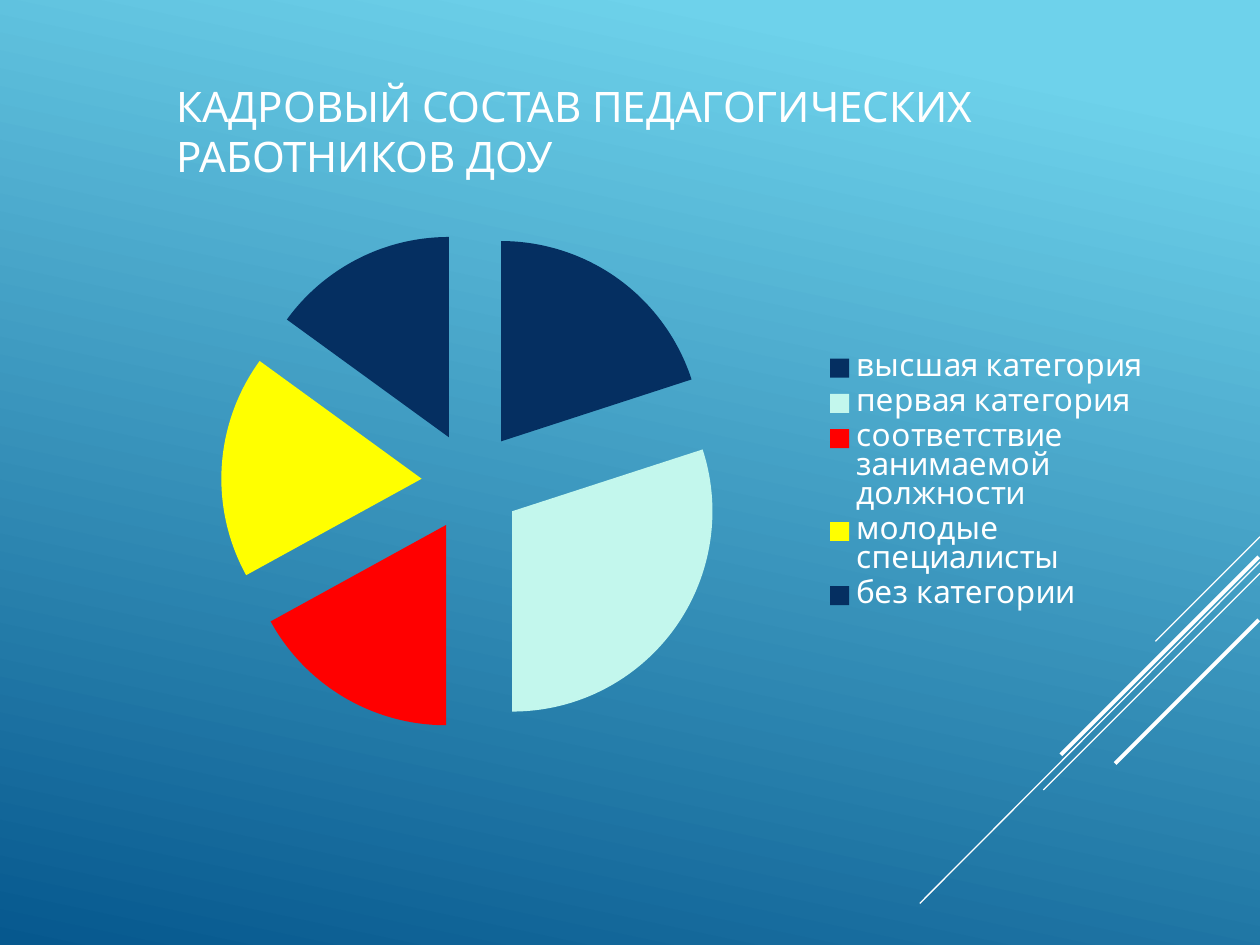
"""Slide with an exploded pie chart of teaching staff by category."""
from lxml import etree
from pptx import Presentation
from pptx import util as u
from pptx.chart import data
from pptx.dml import color
from pptx.enum import chart as ch, shapes, text
from pptx.oxml import ns

COLORS = {"white": "FFFFFF", "sky": "6ED2EB", "deep": "06588E", "navy": "052F61",
          "mint": "C3F7ED", "red": "FF0000", "yellow": "FFFF00"}
FONT = "League Spartan"
Inches = u.Inches


def rgb(name):
    return color.RGBColor.from_string(COLORS[name])


def style_font(font, size):
    for key, value in {"name": FONT, "size": u.Pt(size), "bold": False}.items():
        setattr(font, key, value)
    font.color.rgb = rgb("white")


prs = Presentation()
prs.slide_width, prs.slide_height = Inches(10), Inches(7.5)
slide = prs.slides.add_slide(prs.slide_layouts[6])

backdrop = slide.background.fill
backdrop.gradient()
backdrop.gradient_angle = 360 - 102
for stop, (name, position) in zip(backdrop.gradient_stops, [("sky", 0.1), ("deep", 1)]):
    stop.color.rgb = rgb(name)
    stop.position = position

stripes = [
    (10, 4.26, 9.17, 5.09, 0.75),
    (10, 4.46, 7.3, 7.17, 0.75),
    (10, 4.55, 8.28, 6.27, 0.75),
    (9.99, 4.42, 8.42, 5.99, 2.25),
    (9.99, 4.92, 8.85, 6.06, 2.25),
]
for *ends, width in stripes:
    stripe = slide.shapes.add_connector(shapes.MSO_CONNECTOR.STRAIGHT, *map(Inches, ends))
    stripe.line.color.rgb = rgb("white")
    stripe.line.width = u.Pt(width)
    etree.SubElement(stripe._element.spPr, ns.qn("a:effectLst"))

heading = slide.shapes.add_textbox(Inches(1.3), Inches(0.41), Inches(7.87), Inches(1.26)).text_frame
for key, value in {"word_wrap": True, "vertical_anchor": text.MSO_ANCHOR.MIDDLE,
                   "text": "КАДРОВЫЙ СОСТАВ ПЕДАГОГИЧЕСКИХ РАБОТНИКОВ ДОУ"}.items():
    setattr(heading, key, value)
style_font(heading.paragraphs[0].runs[0].font, 24)

staff = [
    ("высшая категория", 20, "navy"),
    ("первая категория", 30, "mint"),
    ("соответствие занимаемой должности", 17, "red"),
    ("молодые специалисты", 18, "yellow"),
    ("без категории", 15, "navy"),
]
categories, shares, slice_colors = zip(*staff)
staff_data = data.CategoryChartData()
staff_data.categories = categories
staff_data.add_series("Series 1", shares)
pie = slide.shapes.add_chart(ch.XL_CHART_TYPE.PIE, Inches(0.98), Inches(1.7),
                             Inches(8.25), Inches(4.25), staff_data).chart
pie.has_title = False
pie.has_legend = True
for key, value in {"position": ch.XL_LEGEND_POSITION.RIGHT, "include_in_layout": False}.items():
    setattr(pie.legend, key, value)
style_font(pie.font, 18)
style_font(pie.legend.font, 18)

pie.plots[0].vary_by_categories = True
shares_series = pie.plots[0].series[0]
for index, name in enumerate(slice_colors):
    sector = shares_series.points[index].format
    sector.fill.solid()
    sector.fill.fore_color.rgb = rgb(name)
    sector.line.fill.background()
explosion = etree.Element(ns.qn("c:explosion"), val="25")
shares_series._element.find(ns.qn("c:dPt")).addprevious(explosion)

prs.save("out.pptx")
